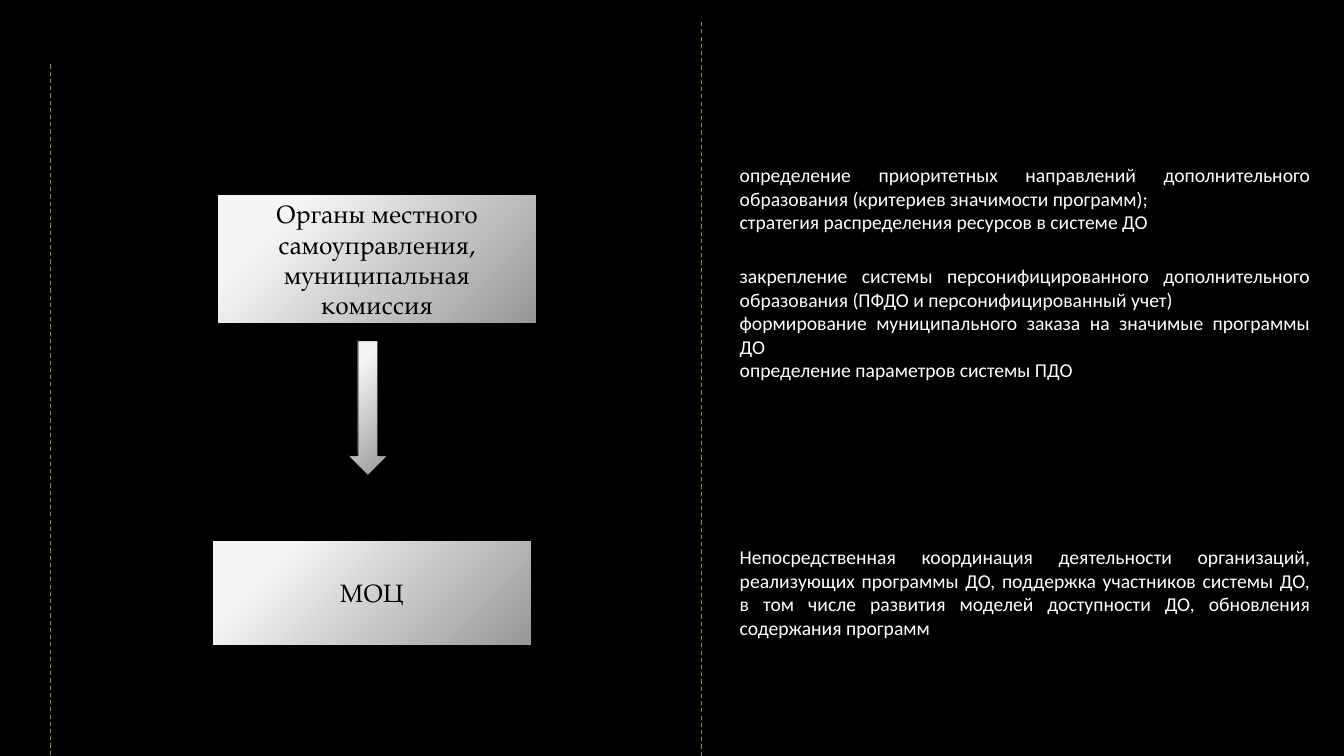
import dataclasses

import lxml.etree
import pptx
import pptx.dml.color
import pptx.enum.dml
import pptx.enum.shapes
import pptx.enum.text
import pptx.oxml
import pptx.oxml.ns
import pptx.util

COLUMNS, ROWS = 40, 30
SHAPES = pptx.enum.shapes.MSO_SHAPE
ALIGN = pptx.enum.text.PP_ALIGN
ANCHOR = pptx.enum.text.MSO_ANCHOR


@dataclasses.dataclass(frozen=True)
class Theme:
    background: str = "000000"
    divider: str = "998946"
    outline: str = "000000"
    gradient: tuple = ((0.2, "F5F5F5"), (1.0, "979797"))
    label: tuple = ("TeX Gyre Pagella", 18, "000000")
    body: tuple = ("Calibri", 14, "FFFFFF")
    line_width: float = 0.75


def rgb(value):
    return pptx.dml.color.RGBColor.from_string(value)


def apply_format(target, values):
    for name, value in values.items():
        setattr(target, name, value)


class SlideBuilder:
    """Draws themed elements on one slide; lengths are grid columns and rows."""

    def __init__(self, deck, theme):
        self.theme = theme
        self.column = deck.slide_width / COLUMNS
        self.row = deck.slide_height / ROWS
        self.page = deck.slides.add_slide(deck.slide_layouts[6])
        self.page.background.fill.solid()
        self.page.background.fill.fore_color.rgb = rgb(theme.background)

    def place(self, left, top, width, height):
        return (round(left * self.column), round(top * self.row),
                round(width * self.column), round(height * self.row))

    def divider(self, column, top):
        """Draw a dashed vertical line down to the slide's lower edge."""
        x, start, _, end = self.place(column, top, 0, ROWS)
        line = self.page.shapes.add_connector(
            pptx.enum.shapes.MSO_CONNECTOR.STRAIGHT, x, start, x, end)
        line.line.color.rgb = rgb(self.theme.divider)
        apply_format(line.line, {
            "width": pptx.util.Pt(self.theme.line_width),
            "dash_style": pptx.enum.dml.MSO_LINE.DASH,
        })
        lxml.etree.SubElement(line._element.spPr, pptx.oxml.ns.qn("a:effectLst"))

    def fill_text(self, frame, paragraphs, style, align):
        font, size, color = style
        frame.word_wrap = True
        for index, text in enumerate(paragraphs):
            para = frame.paragraphs[0] if index == 0 else frame.add_paragraph()
            para.alignment = align
            span = para.add_run()
            span.text = text
            apply_format(span.font, {"name": font, "size": pptx.util.Pt(size)})
            span.font.color.rgb = rgb(color)

    def gradient_shape(self, kind, area, label=None):
        shape = self.page.shapes.add_shape(kind, *self.place(*area))
        shape.shadow.inherit = False
        shape.line.color.rgb = rgb(self.theme.outline)
        shape.line.width = pptx.util.Pt(self.theme.line_width)
        shape.fill.gradient()
        for stop, (position, color) in zip(shape.fill.gradient_stops, self.theme.gradient):
            stop.position = position
            stop.color.rgb = rgb(color)
        self.radiate_from_corner(shape)
        if label:
            shape.text_frame.vertical_anchor = ANCHOR.MIDDLE
            self.fill_text(shape.text_frame, [label], self.theme.label, ALIGN.CENTER)

    def radiate_from_corner(self, shape):
        """Turn the linear gradient into a circular one centred past the top left."""
        linear = shape._element.spPr.find(".//" + pptx.oxml.ns.qn("a:lin"))
        circle = pptx.oxml.parse_xml(
            f'<a:path {pptx.oxml.ns.nsdecls("a")} path="circle">'
            '<a:fillToRect l="-15000" t="-15000" r="115000" b="115000"/></a:path>')
        linear.getparent().replace(linear, circle)

    def description(self, top, height, paragraphs):
        box = self.page.shapes.add_textbox(*self.place(21.72, top, 17.58, height))
        self.fill_text(box.text_frame, paragraphs, self.theme.body, ALIGN.JUSTIFY)


def main():
    deck = pptx.Presentation()
    apply_format(deck, {"slide_width": pptx.util.Inches(13.33),
                        "slide_height": pptx.util.Inches(7.5)})
    slide = SlideBuilder(deck, Theme())

    slide.divider(1.5, 2.56)
    slide.divider(20.88, 0.88)

    slide.gradient_shape(SHAPES.RECTANGLE, (6.48, 7.72, 9.48, 5.12),
                         "Органы местного самоуправления, муниципальная комиссия")
    slide.gradient_shape(SHAPES.DOWN_ARROW, (10.35, 13.52, 1.2, 5.36))
    slide.gradient_shape(SHAPES.RECTANGLE, (6.33, 21.44, 9.48, 4.16), "МОЦ")

    slide.description(6.28, 3.24, [
        "определение приоритетных направлений дополнительного образования "
        "(критериев значимости программ);",
        "стратегия распределения ресурсов в системе ДО",
    ])
    slide.description(10.28, 5.12, [
        "закрепление системы персонифицированного дополнительного образования "
        "(ПФДО и персонифицированный учет)",
        "формирование муниципального заказа на значимые программы ДО",
        "определение параметров системы ПДО",
    ])
    slide.description(21.44, 4.16, [
        "Непосредственная координация деятельности организаций, реализующих "
        "программы ДО, поддержка участников системы ДО, в том числе развития "
        "моделей доступности ДО, обновления содержания программ",
    ])

    deck.save("out.pptx")


if __name__ == "__main__":
    main()
